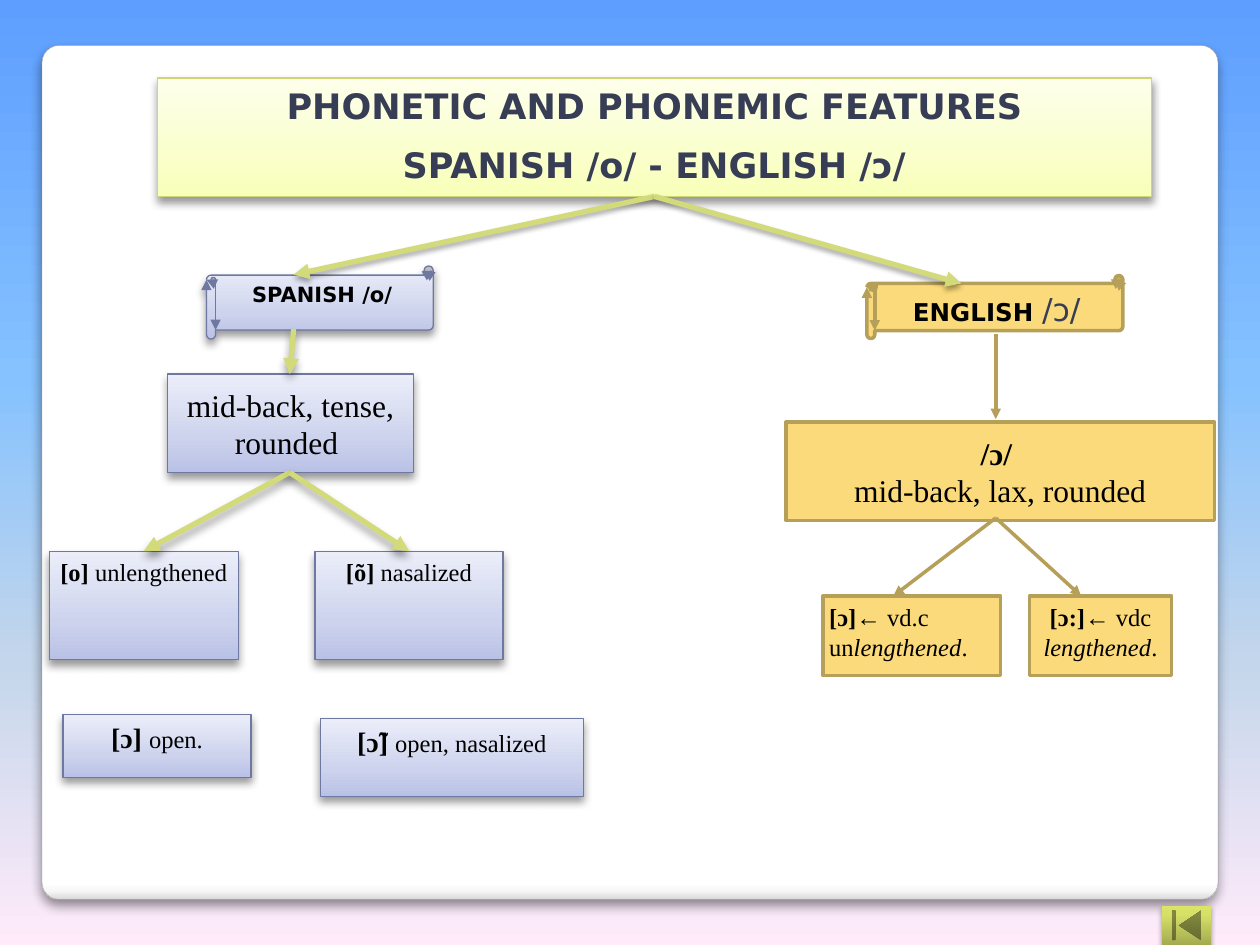
from lxml.etree import SubElement
from pptx import Presentation
from pptx.dml.color import RGBColor
from pptx.enum.shapes import MSO_CONNECTOR, MSO_SHAPE as SHAPE
from pptx.enum.text import MSO_ANCHOR as ANCHOR, PP_ALIGN as ALIGN
from pptx.oxml.ns import qn
from pptx.util import Pt

BLACK = RGBColor(0x00, 0x00, 0x00)
SLATE = RGBColor(0x37, 0x3D, 0x54)
GREY = RGBColor(0xA2, 0xA1, 0xA1)
BLUE_EDGE = RGBColor(0x6E, 0x78, 0xA0)
GOLD = RGBColor(0xFA, 0xDA, 0x7A)
GOLD_EDGE = RGBColor(0xB6, 0x9F, 0x59)
LIME = RGBColor(0xD2, 0xDA, 0x7A)
LIME_EDGE = RGBColor(0xCF, 0xD7, 0x75)
WHITE = RGBColor(0xFF, 0xFF, 0xFF)
SKY_STOPS = [(0, RGBColor(0x5E, 0x9E, 0xFF)), (40, RGBColor(0x85, 0xC2, 0xFF)),
             (70, RGBColor(0xC4, 0xD6, 0xEB)), (100, RGBColor(0xFF, 0xEB, 0xFA))]
PANEL_STOPS = [(0, WHITE), (98, WHITE), (99, RGBColor(0xF7, 0xF7, 0xF7)),
               (100, RGBColor(0xD9, 0xD9, 0xD9))]
BLUE_STOPS = [(0, RGBColor(0xB9, 0xC1, 0xE6)), (35, RGBColor(0xCD, 0xD3, 0xED)),
              (100, RGBColor(0xEB, 0xEE, 0xF9))]
LEMON_STOPS = [(0, RGBColor(0xF8, 0xFF, 0xB8)), (35, RGBColor(0xFA, 0xFF, 0xCC)),
               (100, RGBColor(0xFD, 0xFF, 0xEB))]
OLIVE_STOPS = [(0, RGBColor(0xA3, 0xAB, 0x4F)), (80, RGBColor(0xD7, 0xE1, 0x68)),
               (100, RGBColor(0xDA, 0xE4, 0x66))]
SANS, SERIF = "DejaVu Sans", "Times New Roman"


def paint_gradient(fill, element, stops, angle):
    fill.gradient()
    fill.gradient_angle = angle
    stop_list = element.find(".//" + qn("a:gsLst"))
    for old_stop in list(stop_list):
        stop_list.remove(old_stop)
    for position, color in stops:
        stop = SubElement(stop_list, qn("a:gs"), pos=str(position * 1000))
        SubElement(stop, qn("a:srgbClr"), val=str(color))


def set_shadow(spPr, opacity, blur, distance):
    effects = spPr.find(qn("a:effectLst"))
    if effects is None:
        effects = SubElement(spPr, qn("a:effectLst"))
    if opacity:
        outer = SubElement(effects, qn("a:outerShdw"), blurRad=str(Pt(blur)),
                           dist=str(Pt(distance)), dir="5400000", rotWithShape="0")
        color = SubElement(outer, qn("a:srgbClr"), val=str(BLACK))
        SubElement(color, qn("a:alpha"), val=str(opacity * 1000))


prs = Presentation()
prs.slide_width, prs.slide_height = Pt(720), Pt(540)
slide = prs.slides.add_slide(prs.slide_layouts[6])
paint_gradient(slide.background.fill, slide.element, SKY_STOPS, 270)

panel = slide.shapes.add_shape(SHAPE.ROUNDED_RECTANGLE, Pt(24), Pt(26), Pt(672), Pt(488))
panel.adjustments[0] = 0.02
panel.shadow.inherit = False
paint_gradient(panel.fill, panel.element, PANEL_STOPS, 270)
panel.line.color.rgb = GREY
panel.line.width = Pt(0.25)
set_shadow(panel.element.spPr, 44, 6, 4)

title = {"size": Pt(20), "name": SANS, "bold": True, "color": SLATE}
heading = {"size": Pt(12), "name": SANS, "bold": True, "color": BLACK}
heading_14 = {**heading, "size": Pt(14)}
phoneme = {"size": Pt(18), "name": SANS, "bold": False, "color": SLATE}
feature = {"size": Pt(18), "name": SERIF, "bold": False, "color": BLACK}
feature_bold = {**feature, "bold": True}
note = {**feature, "size": Pt(14)}
note_italic = {**note, "italic": True}
sound = {**note, "bold": True}
sound_16 = {**sound, "size": Pt(16)}

lemon = (LEMON_STOPS, LIME_EDGE, 0.75)
blue = (BLUE_STOPS, BLUE_EDGE, 0.75)
gold = (None, GOLD_EDGE, 2)
RECT, SCROLL = SHAPE.RECTANGLE, SHAPE.HORIZONTAL_SCROLL
TOP, MIDDLE = ANCHOR.TOP, ANCHOR.MIDDLE
CENTER, LEFT = ALIGN.CENTER, ALIGN.LEFT

boxes = [
    (RECT, (90, 44.6, 568, 67.7), lemon, TOP, CENTER,
     [[("PHONETIC AND PHONEMIC FEATURES", title)], [("SPANISH /o/ - ENGLISH /ɔ/", title)]]),
    (SCROLL, (118, 152, 129.6, 41.8), blue, TOP, CENTER, [[("SPANISH /o/", heading)]]),
    (SCROLL, (495.4, 157.5, 146.2, 36), gold, TOP, CENTER,
     [[("ENGLISH ", heading_14), ("/ɔ/", phoneme)]]),
    (RECT, (95.8, 213.8, 140.4, 56.2), blue, MIDDLE, CENTER,
     [[("mid-back, tense, rounded ", feature)]]),
    (RECT, (28.2, 315, 108, 62), blue, TOP, CENTER, [[("[o] ", sound), ("unlengthened", note)]]),
    (RECT, (180, 315, 107.5, 62), blue, TOP, CENTER, [[("[õ]", sound), (" nasalized", note)]]),
    (RECT, (183, 410.4, 150.5, 44.6), blue, TOP, CENTER,
     [[("[ɔ̃] ", sound_16), ("open, nasalized", note)]]),
    (RECT, (449.2, 241.2, 244.8, 56.2), gold, MIDDLE, CENTER,
     [[("/ɔ/ ", feature_bold)], [("mid-back, lax, rounded", feature)]]),
    (RECT, (588.2, 340.6, 81.4, 45.4), gold, TOP, CENTER,
     [[("[ɔ:]←", sound), (" vdc ", note), ("lengthened", note_italic), (".", note)]]),
    (RECT, (470.2, 340.6, 101.5, 45.4), gold, TOP, LEFT,
     [[("[ɔ]← ", sound), ("vd.c un", note), ("lengthened", note_italic), (".", note)]]),
    (RECT, (36, 408.2, 107.5, 36), blue, TOP, CENTER, [[("[ɔ] ", sound_16), ("open.", note)]]),
]

for outline, place, (stops, edge, weight), anchor, align, paragraphs in boxes:
    box = slide.shapes.add_shape(outline, *map(Pt, place))
    box.shadow.inherit = False
    box.line.color.rgb = edge
    box.line.width = Pt(weight)
    if stops:
        paint_gradient(box.fill, box.element, stops, 90)
        set_shadow(box.element.spPr, 40, 5, 3)
    else:
        box.fill.solid()
        box.fill.fore_color.rgb = GOLD
    if outline == SCROLL:
        SubElement(box.element.spPr.find(qn("a:ln")), qn("a:tailEnd"), type="triangle")
    frame = box.text_frame
    frame_format = {"word_wrap": True, "vertical_anchor": anchor, "margin_left": Pt(3.6),
                    "margin_right": Pt(3.6), "margin_top": Pt(3.6),
                    "margin_bottom": Pt(3.6 if anchor == MIDDLE else 0)}
    for key, value in frame_format.items():
        setattr(frame, key, value)
    for index, pieces in enumerate(paragraphs):
        paragraph = frame.add_paragraph() if index else frame.paragraphs[0]
        paragraph.alignment = align
        if index and anchor == TOP:
            paragraph.space_before = Pt(10)
        for words, style in pieces:
            run = paragraph.add_run()
            run.text = words
            for key, value in style.items():
                if key == "color":
                    run.font.color.rgb = value
                else:
                    setattr(run.font, key, value)

title_foot, tense_foot, lax_foot = (374, 112.3), (165.6, 270), (569, 296)
soft, strong, flat = (35, 3, 1.8), (40, 5, 3), (0, 0, 0)
arrows = [
    (title_foot, (167.8, 157), LIME, 3, soft),
    (title_foot, (549.4, 162), LIME, 3, soft),
    ((167.8, 188), (165.6, 213.8), LIME, 3, strong),
    ((569, 190.8), (569, 239.5), GOLD_EDGE, 2, flat),
    (lax_foot, (510.5, 340.6), GOLD_EDGE, 2, flat),
    (lax_foot, (617.8, 340.6), GOLD_EDGE, 2, flat),
    (tense_foot, (82.2, 315), LIME, 3, strong),
    (tense_foot, (233.8, 315), LIME, 3, strong),
]
for start, end, color, weight, shadow in arrows:
    arrow = slide.shapes.add_connector(MSO_CONNECTOR.STRAIGHT, *map(Pt, start + end))
    arrow.line.color.rgb = color
    arrow.line.width = Pt(weight)
    spPr = arrow.element.spPr
    SubElement(spPr.find(qn("a:ln")), qn("a:tailEnd"), type="triangle")
    set_shadow(spPr, *shadow)

start_button = slide.shapes.add_shape(SHAPE.ACTION_BUTTON_BEGINNING,
                                      Pt(663.8), Pt(517.7), Pt(28.2), Pt(22.3))
start_button.shadow.inherit = False
paint_gradient(start_button.fill, start_button.element, OLIVE_STOPS, 90)
start_button.line.fill.background()
set_shadow(start_button.element.spPr, *soft)

prs.save("out.pptx")
